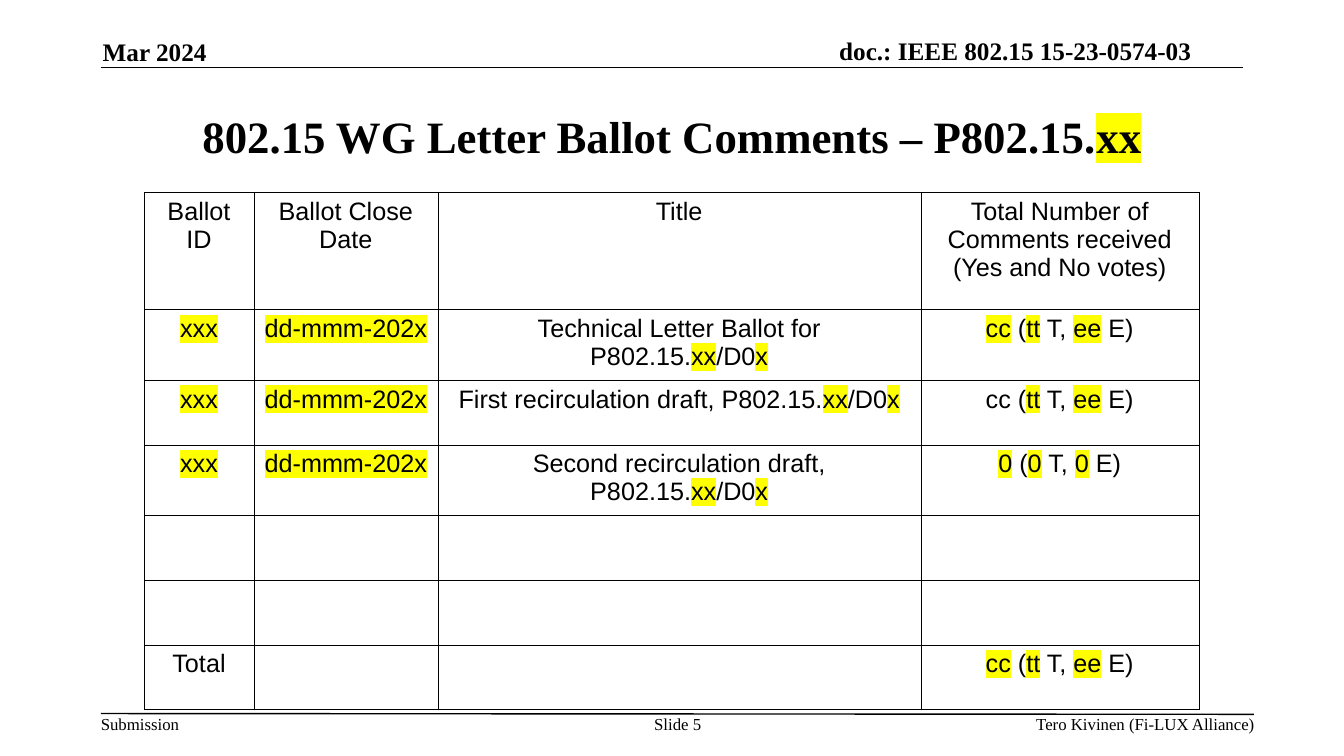
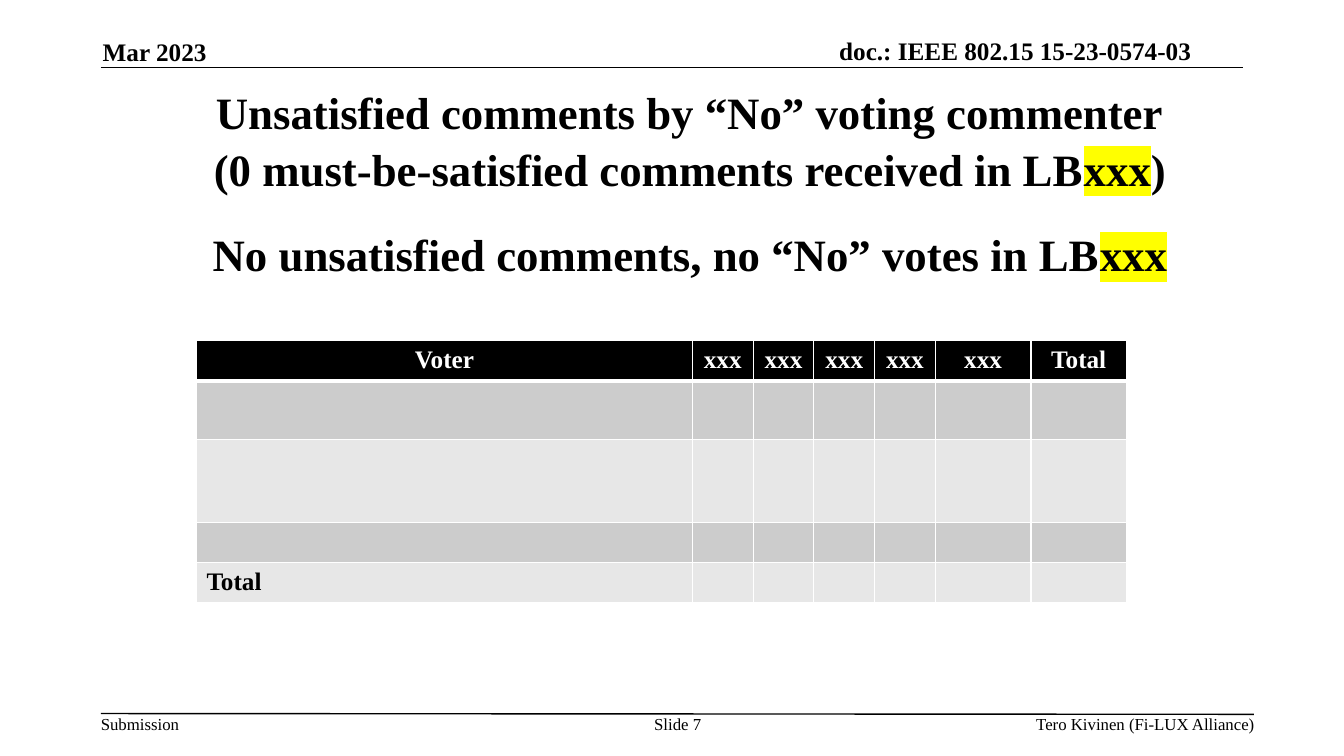
from lxml import etree
from pptx import Presentation
from pptx import util as u
from pptx.dml import color
from pptx.enum import shapes, text
from pptx.oxml import ns

BLACK, WHITE, YELLOW = "000000", "FFFFFF", "FFFF00"
DARK_BAND, LIGHT_BAND = "CCCCCC", "E7E7E7"
SERIF, SANS = "Times New Roman", "Arial"
LEFT, CENTER, RIGHT = text.PP_ALIGN.LEFT, text.PP_ALIGN.CENTER, text.PP_ALIGN.RIGHT
TOP, MIDDLE, BOTTOM = text.MSO_ANCHOR.TOP, text.MSO_ANCHOR.MIDDLE, text.MSO_ANCHOR.BOTTOM

TITLE_FONT = {"name": SERIF, "size": u.Pt(32), "bold": True}
HEADER_FONT = {"name": SERIF, "size": u.Pt(18), "bold": True}
FOOTER_FONT = {"name": SERIF, "size": u.Pt(12), "bold": False}
BALLOT_FONT = {"name": SANS, "size": u.Pt(18), "bold": False}
NO_INSETS = {f"margin_{side}": 0 for side in ("left", "top", "right", "bottom")}
PLAIN_TABLE = {"first_row": False, "horz_banding": False}

BALLOT_ROWS = [
    ["Ballot ID", "Ballot Close Date", "Title",
     "Total Number of Comments received (Yes and No votes)"],
    ["*xxx*", "*dd-mmm-202x*", "Technical Letter Ballot for P802.15.*xx*/D0*x*",
     "*cc* (*tt* T, *ee* E)"],
    ["*xxx*", "*dd-mmm-202x*", "First recirculation draft, P802.15.*xx*/D0*x*",
     "cc (*tt* T, *ee* E)"],
    ["*xxx*", "*dd-mmm-202x*", "Second recirculation draft, P802.15.*xx*/D0*x*",
     "*0* (*0* T, *0* E)"],
    [""] * 4,
    [""] * 4,
    ["Total", "", "", "*cc* (*tt* T, *ee* E)"],
]
VOTER_ROWS = [
    ["Voter"] + ["xxx"] * 5 + ["Total"],
    [""] * 7,
    [""] * 7,
    [""] * 7,
    ["Total"] + [""] * 6,
]


def rgb(hex_value):
    """Turn a hex string into a colour."""
    return color.RGBColor.from_string(hex_value)


def set_all(target, values):
    """Set each named attribute of the target."""
    for name, value in values.items():
        setattr(target, name, value)


def highlight(run):
    """Mark a run with the yellow highlighter."""
    marker = etree.Element(ns.qn("a:highlight"))
    etree.SubElement(marker, ns.qn("a:srgbClr"), val=YELLOW)
    run.font._element.find(ns.qn("a:solidFill")).addnext(marker)


def write_line(paragraph, line, font, align, hex_value=BLACK):
    """Write a line whose parts between asterisks are highlighted."""
    paragraph.alignment = align
    for index, part in enumerate(line.split("*")):
        if part:
            run = paragraph.add_run()
            run.text = part
            set_all(run.font, font)
            run.font.color.rgb = rgb(hex_value)
            if index % 2:
                highlight(run)


def add_label(slide, box, line, font, align=LEFT, anchor=TOP, wrap=True):
    """Add a text box without insets."""
    frame = slide.shapes.add_textbox(*map(u.Cm, box)).text_frame
    set_all(frame, {**NO_INSETS, "word_wrap": wrap, "vertical_anchor": anchor})
    write_line(frame.paragraphs[0], line, font, align)


def add_rule(slide, x1, y1, x2, y2):
    """Add a thin black rule."""
    rule = slide.shapes.add_connector(
        shapes.MSO_CONNECTOR.STRAIGHT, *map(u.Cm, (x1, y1, x2, y2)))
    rule.line.color.rgb = rgb(BLACK)
    rule.line.width = u.Pt(1)
    etree.SubElement(rule._element.spPr, ns.qn("a:effectLst"))


def place_title(slide, box, lines, last_gap=0):
    """Place the title and write its lines, the last one set apart."""
    title = slide.shapes.title
    set_all(title, dict(zip(("left", "top", "width", "height"), map(u.Cm, box))))
    frame = title.text_frame
    set_all(frame, {"word_wrap": True, "vertical_anchor": MIDDLE,
                    "auto_size": text.MSO_AUTO_SIZE.NONE})
    for index, line in enumerate(lines):
        paragraph = frame.add_paragraph() if index else frame.paragraphs[0]
        paragraph.line_spacing = 1.05
        write_line(paragraph, line, TITLE_FONT, CENTER)
    paragraph.space_before = u.Pt(last_gap)


def add_page(deck, month, number):
    """Add a title-only slide with the shared header and footer."""
    slide = deck.slides.add_slide(deck.slide_layouts[5])
    add_rule(slide, 2.54, 1.7, 31.32, 1.7)
    add_rule(slide, 2.54, 17.98, 31.6, 18)
    add_label(slide, (2.59, 0.91, 6.93, 0.76), month, HEADER_FONT, anchor=BOTTOM)
    add_label(slide, (17.07, 0.89, 12.95, 0.76), "doc.: IEEE 802.15 15-23-0574-03",
              HEADER_FONT, RIGHT, BOTTOM)
    add_label(slide, (2.54, 17.98, 1.98, 0.51), "Submission", FOOTER_FONT, wrap=False)
    add_label(slide, (16.1, 17.98, 1.96, 0.99), f"Slide {number}", FOOTER_FONT, CENTER)
    add_label(slide, (19.84, 17.98, 11.78, 0.51), "Tero Kivinen (Fi-LUX Alliance)",
              FOOTER_FONT, RIGHT)
    return slide


def set_borders(cell, hex_value, widths):
    """Draw the left, right, top and bottom borders of a cell."""
    properties = cell._tc.get_or_add_tcPr()
    for index, (side, width) in enumerate(zip("LRTB", widths)):
        border = etree.Element(ns.qn(f"a:ln{side}"), w=str(u.Pt(width)))
        fill = etree.SubElement(border, ns.qn("a:solidFill"))
        etree.SubElement(fill, ns.qn("a:srgbClr"), val=hex_value)
        properties.insert(index, border)


def add_grid(slide, corner, widths, heights, rows):
    """Add an unstyled table and yield each cell with its row and text."""
    box = (*corner, sum(widths), sum(heights))
    table = slide.shapes.add_table(len(rows), len(widths), *map(u.Cm, box)).table
    set_all(table, PLAIN_TABLE)
    for column, width in zip(table.columns, widths):
        column.width = u.Cm(width)
    for row, height in zip(table.rows, heights):
        row.height = u.Cm(height)
    for r, values in enumerate(rows):
        for c, value in enumerate(values):
            yield table.cell(r, c), r, value


def add_ballot_table(slide):
    """Add the outlined table of ballots."""
    widths, heights = (2.77, 4.63, 12.17, 7.01), [2.95] + [1.63] * 6
    for cell, _, value in add_grid(slide, (3.63, 4.85), widths, heights, BALLOT_ROWS):
        cell.fill.background()
        set_borders(cell, BLACK, [0.06] * 4)
        write_line(cell.text_frame.paragraphs[0], value, BALLOT_FONT, CENTER)


def add_voter_table(slide):
    """Add the banded table of voters."""
    widths = [12.5] + [1.53] * 4 + [2.41] * 2
    heights = (0.97, 1.47, 2.08, 0.97, 0.97)
    for cell, r, value in add_grid(slide, (4.95, 8.59), widths, heights, VOTER_ROWS):
        heading = r == 0
        band = DARK_BAND if r % 2 else LIGHT_BAND
        cell.fill.solid()
        cell.fill.fore_color.rgb = rgb(BLACK if heading else band)
        set_borders(cell, WHITE, (0.96, 0.96, 3 if r == 1 else 0.96, 3 if heading else 0.96))
        write_line(cell.text_frame.paragraphs[0], value, HEADER_FONT,
                   CENTER if heading else LEFT, WHITE if heading else BLACK)


def main():
    """Build and save the deck."""
    deck = Presentation()
    set_all(deck, {"slide_width": u.Cm(33.87), "slide_height": u.Cm(19.05)})

    ballots = add_page(deck, "Mar 2024", 5)
    place_title(ballots, (2.54, 1.9, 28.78, 2.95),
                ["802.15 WG Letter Ballot Comments – P802.15.*xx*"])
    add_ballot_table(ballots)

    voters = add_page(deck, "Mar 2023", 7)
    place_title(voters, (2.59, 1.78, 29.59, 5.59),
                ["Unsatisfied comments by “No” voting commenter",
                 "(0 must-be-satisfied comments received in LB*xxx*)",
                 "No unsatisfied comments, no “No” votes in LB*xxx*"], last_gap=21)
    add_voter_table(voters)

    deck.save("out.pptx")


if __name__ == "__main__":
    main()
